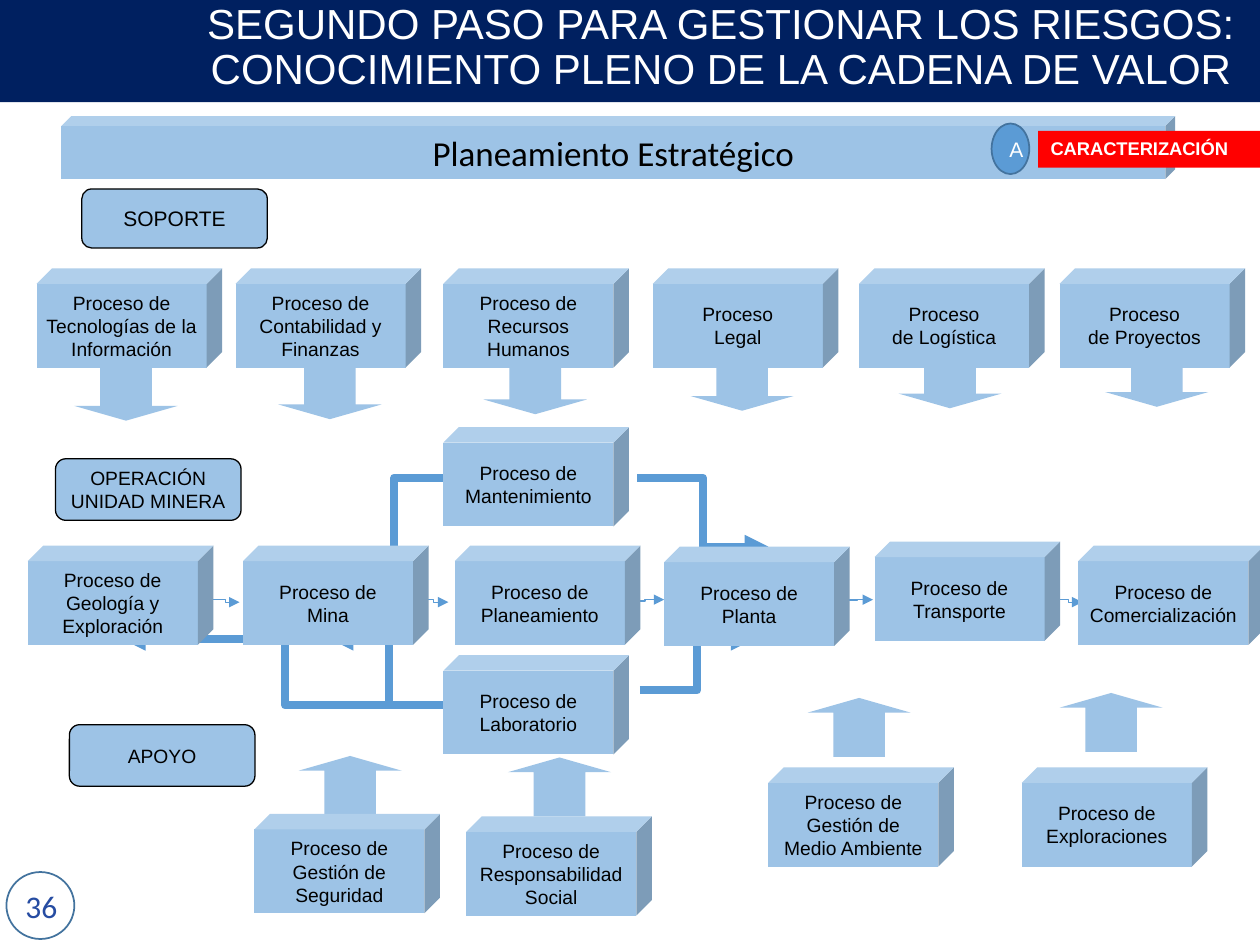
from lxml import etree
from pptx import Presentation
from pptx.dml.color import RGBColor
from pptx.enum.shapes import MSO_CONNECTOR, MSO_SHAPE
from pptx.enum.text import MSO_ANCHOR, PP_ALIGN
from pptx.oxml.ns import qn
from pptx.util import Cm, Pt

COLORS = {
    "navy": "002060", "sky": "9DC3E6", "blue": "5B9BD5", "edge": "43739E",
    "red": "FF0000", "number": "264CA2", "white": "FFFFFF", "black": "000000",
}


def set_text(sp, text, size=11, font="Arial", color="black", bold=False,
             align=PP_ALIGN.CENTER, anchor=MSO_ANCHOR.MIDDLE, wrap=False,
             insets=(0.25, 0.13), spacing=None):
    """Write one paragraph per line of text; a vertical tab breaks a line."""
    tf = sp.text_frame
    tf.text = text
    tf.word_wrap = wrap
    tf.vertical_anchor = anchor
    tf.margin_left = tf.margin_right = Cm(insets[0])
    tf.margin_top = tf.margin_bottom = Cm(insets[1])
    for p in tf.paragraphs:
        p.alignment = align
        p.line_spacing = spacing
        for r in p.runs:
            r.font.size = Pt(size)
            r.font.name = font
            r.font.bold = bold
            r.font.color.rgb = RGBColor.from_string(COLORS[color])


def add_shape(kind, x, y, w, h, fill="sky", line=None, width=1):
    sp = s.shapes.add_shape(kind, Cm(x), Cm(y), Cm(w), Cm(h))
    sp.shadow.inherit = False
    sp.fill.solid()
    sp.fill.fore_color.rgb = RGBColor.from_string(COLORS[fill])
    if line:
        sp.line.color.rgb = RGBColor.from_string(COLORS[line])
        sp.line.width = Pt(width)
    else:
        sp.line.fill.background()
    return sp


prs = Presentation()
prs.slide_width, prs.slide_height = Cm(25.4), Cm(19.05)
s = prs.slides.add_slide(prs.slide_layouts[5])

# Title on its band
add_shape(MSO_SHAPE.RECTANGLE, 0, 0, 25.4, 2.06, "navy")
title = s.shapes.title
title.left, title.top, title.width, title.height = Cm(1.35), Cm(0), Cm(26.37), Cm(1.96)
set_text(title, "SEGUNDO PASO PARA GESTIONAR LOS RIESGOS:\v"
         "CONOCIMIENTO PLENO DE LA CADENA DE VALOR",
         size=24, color="white", wrap=True, spacing=0.9)
s.shapes.element.append(title.element)  # in front of the band

# Flow connectors: thick ones around the mine, thin ones along the chain
flows = {
    4.5: [(9.25, 9.63, 6.65, 11.33), (12.85, 9.63, 15.49, 11.02),
          (9.04, 14.22, 6.65, 12.88), (12.9, 13.92, 15.21, 12.88),
          (9.04, 14.22, 2.46, 12.88)],
    0.75: [(4.27, 12.09, 4.83, 12.14), (8.43, 12.09, 9.04, 12.14),
           (12.62, 12.12, 13.39, 12.09), (16.99, 12.1, 17.6, 12.09),
           (21.26, 12.09, 21.82, 12.14)],
}
for width, routes in flows.items():
    for route in routes:
        cx = s.shapes.add_connector(MSO_CONNECTOR.ELBOW, *map(Cm, route))
        cx.line.color.rgb = RGBColor.from_string(COLORS["blue"])
        cx.line.width = Pt(width)
        etree.SubElement(cx.line._get_or_add_ln(), qn("a:tailEnd"), type="triangle")
        etree.SubElement(cx._element.spPr, qn("a:effectLst"))

# Block arrows: down from support, up from backing processes
down = [(1.5, 7.29), (5.61, 7.26), (9.75, 7.16), (13.92, 7.09), (18.11, 7.04), (22.28, 7.01)]
up = [(6.02, 15.24), (10.24, 15.27), (16.28, 14.07), (21.36, 13.97)]
for rotation, places in ((180, down), (0, up)):
    for x, y in places:
        sp = add_shape(MSO_SHAPE.UP_ARROW, x, y, 2.08, 1.19)
        sp.adjustments[0], sp.adjustments[1] = 0.5, 0.25
        sp.rotation = rotation

# Section labels
for text, x, y, h, size in [
    ("SOPORTE", 1.65, 3.81, 1.19, 12),
    ("OPERACIÓN\nUNIDAD MINERA", 1.12, 9.25, 1.24, 11),
    ("APOYO", 1.4, 14.61, 1.24, 11),
]:
    sp = add_shape(MSO_SHAPE.ROUNDED_RECTANGLE, x, y, 3.74, h, line="black", width=0.75)
    set_text(sp, text, size=size, insets=(0.18, 0))

# Planning bar
sp = add_shape(MSO_SHAPE.CUBE, 1.24, 2.34, 22.45, 1.27)
sp.adjustments[0] = 0.156
set_text(sp, "Planeamiento Estratégico", size=20, font="Calibri")

# Process blocks
processes = [
    # Support
    ("Proceso de\nTecnologías de la\nInformación", 0.74, 5.41),
    ("Proceso de\nContabilidad y\nFinanzas", 4.75, 5.41),
    ("Proceso de\nRecursos\nHumanos", 8.94, 5.41),
    ("Proceso\nLegal", 13.16, 5.41),
    ("Proceso\nde Logística", 17.32, 5.41),
    ("Proceso\nde Proyectos", 21.36, 5.41),
    # Operation
    ("Proceso de\nGeología y\nExploración", 0.56, 11),
    ("Proceso de\nMina", 4.9, 11),
    ("Proceso de\nPlaneamiento", 9.17, 11),
    ("Proceso de\nMantenimiento", 8.94, 8.61),
    ("Proceso de\nLaboratorio", 8.94, 13.21),
    ("Proceso de\nPlanta", 13.39, 11.02),
    ("Proceso de\nTransporte", 17.63, 10.92),
    ("Proceso de\nComercialización", 21.74, 11),
    # Backing
    ("Proceso de\nGestión de\nSeguridad", 5.13, 16.41),
    ("Proceso de\nResponsabilidad\nSocial", 9.4, 16.46),
    ("Proceso de\nGestión de\nMedio Ambiente", 15.49, 15.47),
    ("Proceso de\nExploraciones", 20.6, 15.47),
]
for text, x, y in processes:
    sp = add_shape(MSO_SHAPE.CUBE, x, y, 3.74, 2)
    sp.adjustments[0] = 0.156
    set_text(sp, text)

# Step marker
sp = add_shape(MSO_SHAPE.FLOWCHART_CONNECTOR, 19.99, 2.49, 0.76, 1.02, "blue", line="edge")
set_text(sp, "A", size=12, color="white", wrap=True)
sp = add_shape(MSO_SHAPE.RECTANGLE, 20.93, 2.64, 4.47, 0.74, "red")
set_text(sp, "CARACTERIZACIÓN", size=10.5, color="white", bold=True,
         align=PP_ALIGN.LEFT, anchor=MSO_ANCHOR.TOP, wrap=True)

# Page number
add_shape(MSO_SHAPE.OVAL, 0.13, 17.58, 1.37, 1.35, "white", line="edge")
sp = s.shapes.add_textbox(Cm(0.25), Cm(17.75), Cm(1.17), Cm(1.02))
set_text(sp, "36", size=18, font="Calibri", color="number",
         anchor=MSO_ANCHOR.TOP, wrap=True)

prs.save("out.pptx")
